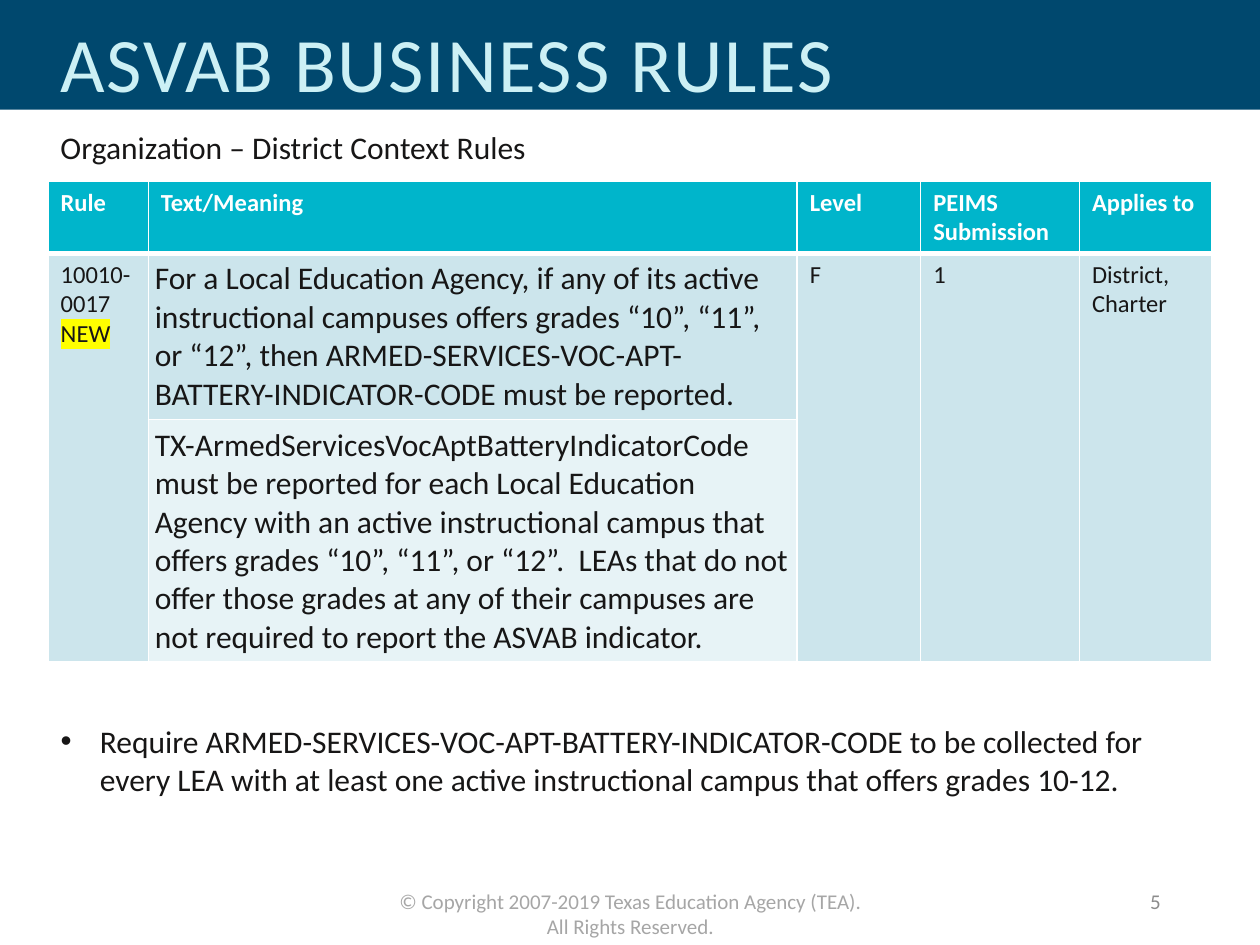
import pptx
import pptx.dml.color
import pptx.enum.shapes
import pptx.enum.text
import pptx.oxml.ns
import pptx.util
from lxml import etree

Cm = pptx.util.Cm
Pt = pptx.util.Pt
ALIGN = pptx.enum.text.PP_ALIGN
ANCHOR = pptx.enum.text.MSO_ANCHOR
NO_AUTOFIT = pptx.enum.text.MSO_AUTO_SIZE.NONE
FONT = "Calibri"
INK = "171616"
WHITE = "FFFFFF"

COLUMN_WIDTHS = [2.02, 13.08, 2.49, 3.2, 2.67]
ROW_HEIGHTS = [1.45, 3.35, 4.88]
ROW_FILLS = ["00B5CB", "CCE5EC", "E7F3F6"]
MERGED_COLUMNS = [0, 2, 3, 4]
RULE_ROWS = [
    ["Rule", "Text/Meaning", "Level", "PEIMS\nSubmission", "Applies to"],
    [
        "10010-0017\nNEW",
        "For a Local Education Agency, if any of its active instructional campuses "
        "offers grades “10”, “11”, or “12”, then "
        "ARMED-SERVICES-VOC-APT-BATTERY-INDICATOR-CODE must be reported.",
        "F",
        "1",
        "District, Charter",
    ],
    [
        "",
        "TX-ArmedServicesVocAptBatteryIndicatorCode must be reported for each Local "
        "Education Agency with an active instructional campus that offers grades "
        "“10”, “11”, or “12”.  LEAs that do not offer those grades at any of their "
        "campuses are not required to report the ASVAB indicator.",
        "",
        "",
        "",
    ],
]


def color(value):
    return pptx.dml.color.RGBColor.from_string(value)


def add_element(parent, tag, **attributes):
    return etree.SubElement(parent, pptx.oxml.ns.qn(tag), attributes)


def place(shape, left, top, width, height):
    shape.left, shape.top = Cm(left), Cm(top)
    shape.width, shape.height = Cm(width), Cm(height)


def style(para, size, value, bold=False, align=ALIGN.LEFT):
    para.alignment = align
    para.font.name = FONT
    para.font.size = Pt(size)
    para.font.bold = bold
    para.font.color.rgb = color(value)


def add_text(page, text, left, top, width, height, size, value, align=ALIGN.LEFT):
    box = page.shapes.add_textbox(Cm(left), Cm(top), Cm(width), Cm(height))
    box.text_frame.word_wrap = True
    para = box.text_frame.paragraphs[0]
    para.text = text
    style(para, size, value, align=align)
    return box


def add_heading(page, left, top, width, height):
    band = page.shapes.add_shape(
        pptx.enum.shapes.MSO_SHAPE.RECTANGLE, Cm(left), Cm(top), Cm(width), Cm(height)
    )
    band.shadow.inherit = False
    band.fill.solid()
    band.fill.fore_color.rgb = color("00486E")
    band.line.fill.background()
    page.shapes.element.insert(2, band.element)

    title = page.shapes.title
    place(title, left + 0.97, top + 0.25, 21.03, height)
    frame = title.text_frame
    frame.auto_size = NO_AUTOFIT
    frame.vertical_anchor = ANCHOR.MIDDLE
    para = frame.paragraphs[0]
    para.text = "ASVAB BUSINESS RULES"
    para.runs[0]._r.get_or_add_rPr().set("spc", "100")
    para.line_spacing = 0.9
    style(para, 44, "CCF0F5")


def set_borders(cell, bottom_width):
    properties = cell._tc.get_or_add_tcPr()
    for side, width in (("L", 1), ("R", 1), ("T", 1), ("B", bottom_width)):
        line = add_element(properties, f"a:ln{side}", w=str(Pt(width)))
        fill = add_element(line, "a:solidFill")
        add_element(fill, "a:srgbClr", val=WHITE)


def highlight(span, value):
    mark = add_element(span._r.get_or_add_rPr(), "a:highlight")
    add_element(mark, "a:srgbClr", val=value)


def add_rules_table(page, left, top):
    frame = page.shapes.add_table(
        len(ROW_HEIGHTS), len(COLUMN_WIDTHS), Cm(left), Cm(top),
        Cm(sum(COLUMN_WIDTHS)), Cm(sum(ROW_HEIGHTS)),
    )
    table = frame.table
    for column, width in zip(table.columns, COLUMN_WIDTHS):
        column.width = Cm(width)
    for row, height in zip(table.rows, ROW_HEIGHTS):
        row.height = Cm(height)
    for index in MERGED_COLUMNS:
        table.cell(1, index).merge(table.cell(2, index))

    for row_index, texts in enumerate(RULE_ROWS):
        header = row_index == 0
        for column_index, text in enumerate(texts):
            cell = table.cell(row_index, column_index)
            meaning = column_index == 1 and not header
            set_borders(cell, 3 if header else 1)
            cell.fill.solid()
            cell.fill.fore_color.rgb = color(ROW_FILLS[row_index])
            if meaning:
                cell.margin_left = cell.margin_right = Cm(0.13)
                cell.margin_top = cell.margin_bottom = Cm(0.13)
            cell.text = text
            for para in cell.text_frame.paragraphs:
                style(para, 18 if meaning else 14, WHITE if header else INK, header)
    highlight(table.cell(1, 0).text_frame.paragraphs[1].runs[0], "FFFF00")


def add_requirement(page, left, top, width, height):
    body = page.placeholders[1]
    place(body, left, top, width, height)
    body.text_frame.auto_size = NO_AUTOFIT
    para = body.text_frame.paragraphs[0]
    para.text = (
        "Require ARMED-SERVICES-VOC-APT-BATTERY-INDICATOR-CODE to be collected for "
        "every LEA with at least one active instructional campus that offers grades 10-12."
    )
    properties = para._p.get_or_add_pPr()
    properties.set("marL", str(Cm(0.79)))
    properties.set("indent", str(-Cm(0.79)))
    add_element(properties, "a:buFont", typeface="Arial")
    add_element(properties, "a:buChar", char="•")
    para.space_before = Pt(0)
    style(para, 18, INK)


def add_footer(page, left, top):
    add_text(
        page, "© Copyright 2007-2019 Texas Education Agency (TEA). All Rights Reserved.",
        left + 7.72, top + 0.13, 9.98, 0.76, 12, "A6A6A6", ALIGN.CENTER,
    )
    number = add_text(
        page, "5", left + 17.93, top, 5.72, 1.02, 12, "8C8C8C", ALIGN.RIGHT
    )
    number.text_frame.vertical_anchor = ANCHOR.MIDDLE


def main():
    deck = pptx.Presentation()
    deck.slide_width, deck.slide_height = Cm(25.4), Cm(19.05)
    page = deck.slides.add_slide(deck.slide_layouts[1])
    add_heading(page, 0, 0, 25.4, 2.21)
    add_text(page, "Organization – District Context Rules", 0.97, 2.46, 20.83, 1.02, 18, INK)
    add_rules_table(page, 0.97, 3.66)
    add_requirement(page, 0.97, 14.43, 23.44, 1.8)
    add_footer(page, 0, 17.65)
    deck.save("out.pptx")


if __name__ == "__main__":
    main()
